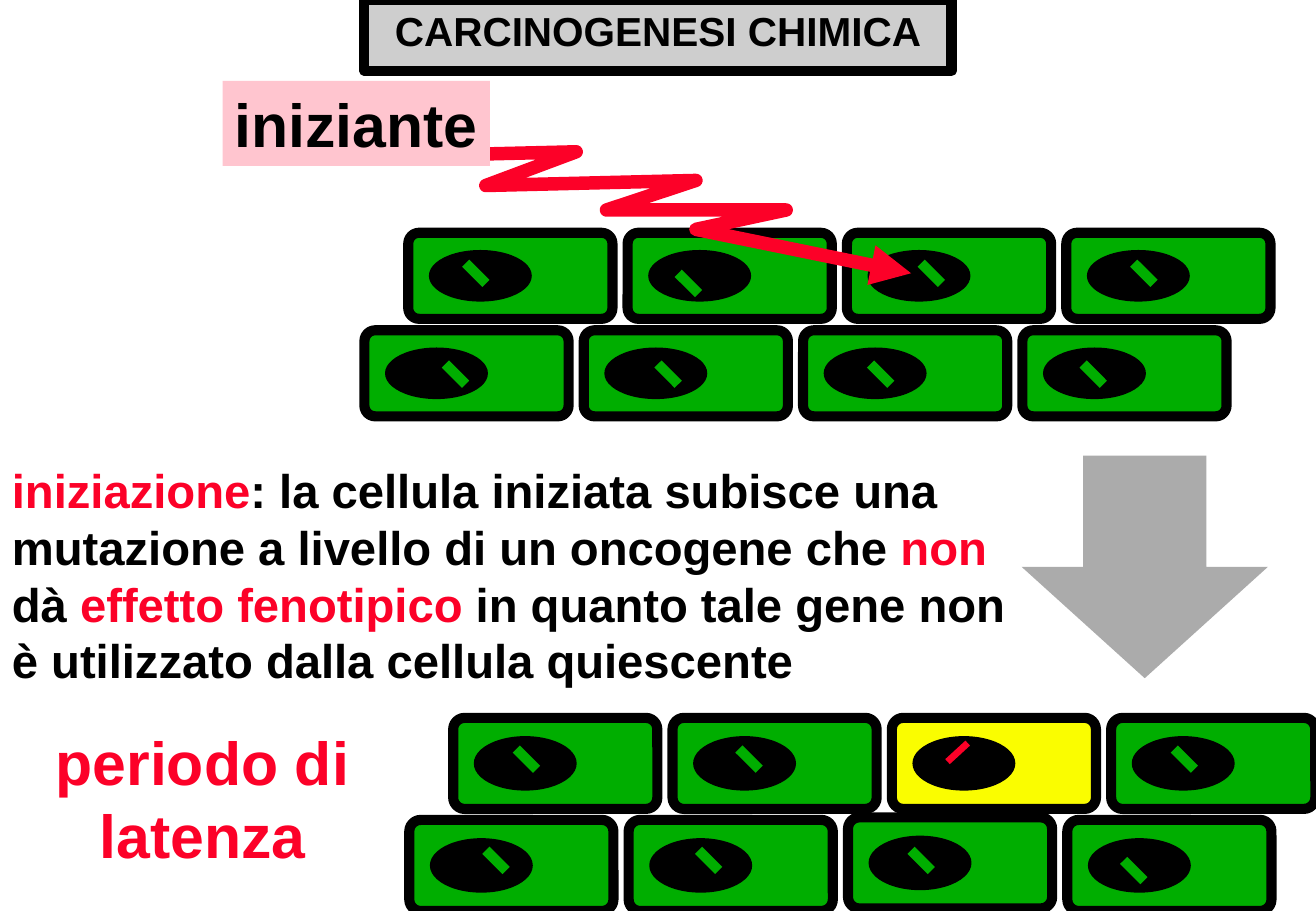
from dataclasses import dataclass

from lxml import etree
from pptx import Presentation
from pptx.dml.color import RGBColor
from pptx.enum.shapes import MSO_CONNECTOR, MSO_SHAPE
from pptx.enum.text import MSO_AUTO_SIZE, PP_ALIGN
from pptx.oxml.ns import qn
from pptx.util import Pt

RECTANGLE = MSO_SHAPE.RECTANGLE
ROUNDED = MSO_SHAPE.ROUNDED_RECTANGLE
OVAL = MSO_SHAPE.OVAL
DOWN_ARROW = MSO_SHAPE.DOWN_ARROW
STRAIGHT = MSO_CONNECTOR.STRAIGHT
LEFT, CENTER = PP_ALIGN.LEFT, PP_ALIGN.CENTER
GROW = MSO_AUTO_SIZE.SHAPE_TO_FIT_TEXT


@dataclass(frozen=True)
class Theme:
    font: str = "Arial"
    black: str = "000000"
    red: str = "FC0128"
    green: str = "00AE00"
    yellow: str = "FAFD00"
    pink: str = "FFC5CF"
    light_gray: str = "CECECE"
    gray: str = "ABABAB"
    title_size: int = 24
    body_size: int = 28
    label_size: int = 36
    leading: float = 1.2


THEME = Theme()


def color(code):
    return RGBColor.from_string(code)


def add_filled(shapes, kind, box, fill, border=None, border_width=0):
    shape = shapes.add_shape(kind, *map(Pt, box))
    shape.shadow.inherit = False
    shape.fill.solid()
    shape.fill.fore_color.rgb = color(fill)
    if border:
        shape.line.color.rgb = color(border)
        shape.line.width = Pt(border_width)
    else:
        shape.line.fill.background()
    return shape


def write(shape, phrases, size, align=LEFT, wrap=True):
    frame = shape.text_frame
    frame.word_wrap = wrap
    frame.auto_size = GROW
    frame.vertical_anchor = None
    paragraph = frame.paragraphs[0]
    paragraph.alignment = align
    paragraph.line_spacing = Pt(size * THEME.leading)
    for text, ink in phrases:
        run = paragraph.add_run()
        run.text = text
        run.font.name = THEME.font
        run.font.size = Pt(size)
        run.font.bold = True
        run.font.color.rgb = color(ink)


def add_title(slide, box):
    banner = add_filled(slide.shapes, RECTANGLE, box, THEME.light_gray, THEME.black, 6)
    write(banner, [("CARCINOGENESI CHIMICA", THEME.black)], THEME.title_size, CENTER)


def add_gene(shapes, x, y, dx, dy, ink, width):
    gene = shapes.add_connector(STRAIGHT, Pt(x), Pt(y), Pt(x + dx), Pt(y + dy))
    gene.line.color.rgb = color(ink)
    gene.line.width = Pt(width)
    etree.SubElement(gene._element.spPr, qn("a:effectLst"))


def add_tissue(slide, box, row_pitch, cell_height, rows, mutated=None, raised=None):
    left, top, width, column_pitch = box
    cells = slide.shapes.add_group_shape().shapes
    nucleus_height = cell_height * 0.58
    for row, genes in enumerate(rows):
        for column, (gene_x, gene_y) in enumerate(genes):
            x = left + column * column_pitch - row * 26
            y = top + row * row_pitch
            if (row, column) == raised:
                y -= 1.5
            is_mutated = (row, column) == mutated
            fill = THEME.yellow if is_mutated else THEME.green
            cell = add_filled(cells, ROUNDED, (x, y, width, cell_height), fill, THEME.black, 6)
            cell.adjustments[0] = 0.125
            nucleus = (x + 12.7, y + cell_height * 0.21, 60, nucleus_height)
            add_filled(cells, OVAL, nucleus, THEME.black, THEME.black, 1)
            stroke = (12, -11, THEME.red, 4) if is_mutated else (12, 12, THEME.green, 6)
            add_gene(cells, x + gene_x, y + gene_y, *stroke)


def add_initiator(slide, box):
    left, top, width, height = box
    bends = [(126.5, 44), (209.5, 42), (156, 62), (280.5, 59), (227.5, 76.5),
             (334, 76.5), (280.5, 88), (408, 114)]
    points = [(Pt(left + x), Pt(top + y)) for x, y in bends]
    builder = slide.shapes.build_freeform(*points[0])
    builder.add_line_segments(points[1:], close=False)
    bolt = builder.convert_to_shape()
    bolt.shadow.inherit = False
    bolt.fill.background()
    bolt.line.color.rgb = color(THEME.red)
    bolt.line.width = Pt(8)
    outline = bolt.line._get_or_add_ln()
    etree.SubElement(outline, qn("a:round"))
    etree.SubElement(outline, qn("a:tailEnd"), type="triangle")
    label = add_filled(slide.shapes, RECTANGLE, box, THEME.pink)
    write(label, [("iniziante", THEME.black)], THEME.label_size, wrap=False)


def add_caption(slide, box, phrases, size, align=LEFT):
    write(slide.shapes.add_textbox(*map(Pt, box)), phrases, size, align)


def build_slide(slide):
    add_title(slide, (216, 0, 348, 42))
    add_tissue(slide, (242, 138, 121, 130), 57.8, 51, [
        [(34, 18), (30, 24), (44, 18), (40, 18)],
        [(48, 20), (44, 20), (40, 20), (36, 20)],
    ])
    add_initiator(slide, (132, 48, 158.4, 50.4))
    add_filled(slide.shapes, DOWN_ARROW, (605.5, 270, 146, 132), THEME.gray)
    add_caption(slide, (0, 270, 606, 142), [
        ("iniziazione", THEME.red),
        (": la cellula iniziata subisce una mutazione a livello di un oncogene che ", THEME.black),
        ("non", THEME.red),
        (" dà ", THEME.black),
        ("effetto fenotipico", THEME.red),
        (" in quanto tale gene non è utilizzato dalla cellula quiescente", THEME.black),
    ], THEME.body_size)
    add_caption(slide, (0, 426, 240, 93.6), [("periodo di latenza", THEME.red)],
                THEME.label_size, CENTER)
    add_tissue(slide, (268.6, 425.5, 121, 130), 60.5, 54, [
        [(37.4, 18.5), (39.4, 18.5), (33, 26), (37.4, 18.5)],
        [(45.4, 18), (41.4, 18), (37.4, 19.5), (33.4, 24)],
    ], mutated=(0, 2), raised=(1, 2))


def main():
    deck = Presentation()
    deck.slide_width, deck.slide_height = Pt(780), Pt(540)
    build_slide(deck.slides.add_slide(deck.slide_layouts[6]))
    deck.save("out.pptx")


if __name__ == "__main__":
    main()
